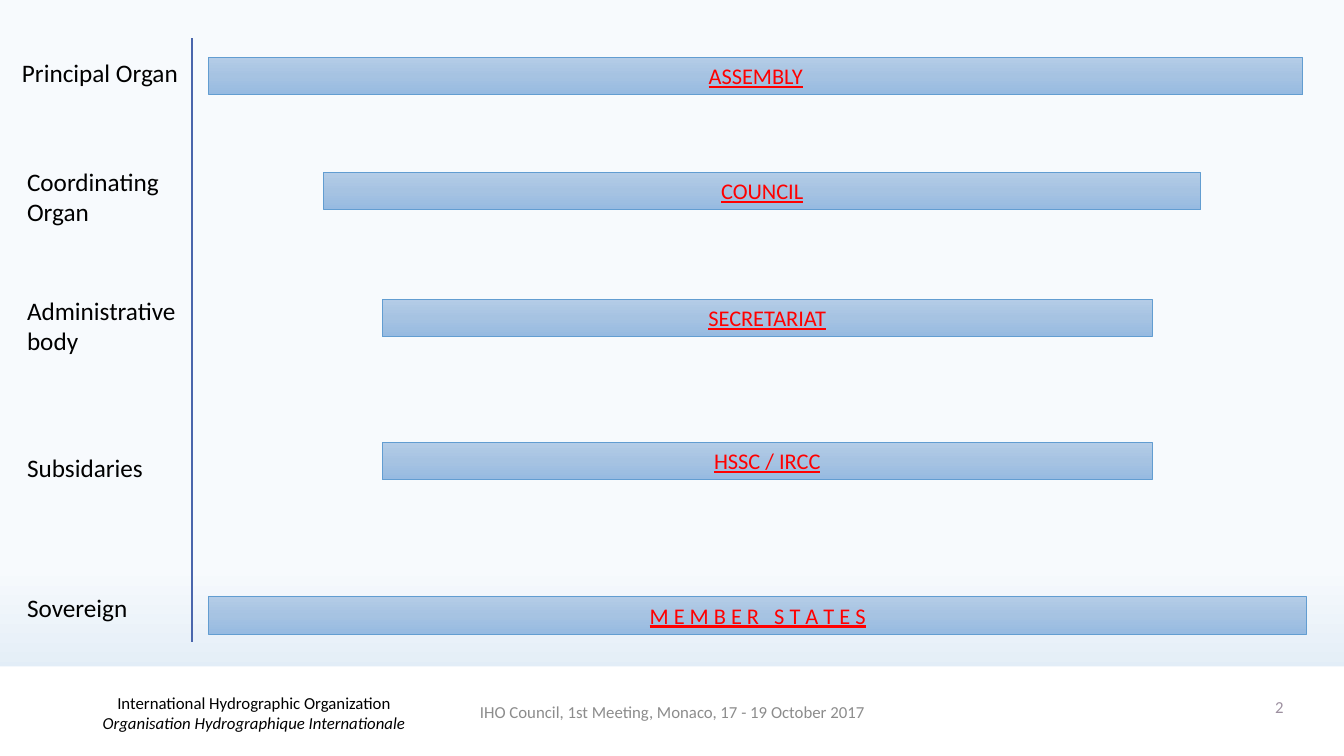
import copy
from dataclasses import dataclass

import pptx
import pptx.dml.color
import pptx.enum.shapes
import pptx.enum.text
import pptx.oxml.ns
import pptx.oxml.xmlchemy
import pptx.util
from pptx.util import Inches

COLORS = {
    "sky": "F7FAFD", "sky_end": "D0E2F1", "white": "FFFFFF", "black": "000000",
    "bar_top": "B4CCE7", "bar_middle": "A6C3E2", "bar_bottom": "96BAE1",
    "bar_edge": "629DD1", "bar_text": "FF0000", "divider": "4A66AC",
    "footer": "8C8C8C", "number": "9D90A0",
}
ALIGN = pptx.enum.text.PP_ALIGN
ANCHOR = pptx.enum.text.MSO_ANCHOR
AUTO_SIZE = pptx.enum.text.MSO_AUTO_SIZE
RECTANGLE = pptx.enum.shapes.MSO_SHAPE.RECTANGLE
BAR_HEIGHT = 0.37


@dataclass
class Organ:
    role: str
    role_left: float
    role_top: float
    role_height: float
    name: str
    bar_left: float
    bar_top: float
    bar_width: float


@dataclass
class FooterItem:
    text: str
    left: float
    top: float
    width: float
    color: str
    align: ALIGN
    anchor: ANCHOR


ORGANS = [
    Organ("Principal Organ", 0.12, 0.52, 0.4, "ASSEMBLY", 2.07, 0.57, 10.85),
    Organ("Coordinating\vOrgan", 0.17, 1.6, 0.71, "COUNCIL", 3.21, 1.71, 8.7),
    Organ("Administrative\vbody", 0.17, 2.88, 0.71, "SECRETARIAT", 3.79, 2.97, 7.64),
    Organ("Subsidaries", 0.17, 4.44, 0.4, "HSSC / IRCC", 3.79, 4.39, 7.64),
    Organ("Sovereign", 0.17, 5.83, 0.4, "M E M B E R   S T A T E S", 2.07, 5.92, 10.89),
]
FOOTER = [
    FooterItem("International Hydrographic Organization\v"
               "Organisation Hydrographique Internationale",
               0.27, 6.87, 4.5, "black", ALIGN.CENTER, ANCHOR.MIDDLE),
    FooterItem("IHO Council, 1st Meeting, Monaco, 17 - 19 October 2017",
               4.42, 6.86, 4.5, "footer", ALIGN.CENTER, ANCHOR.MIDDLE),
    FooterItem("2", 9.83, 6.86, 3, "number", ALIGN.RIGHT, ANCHOR.TOP),
]


def rgb(name: str) -> pptx.dml.color.RGBColor:
    return pptx.dml.color.RGBColor.from_string(COLORS[name])


def fill_gradient(fill, owner, stops: list[tuple[float, str]]) -> None:
    """Fill from top to bottom; owner is the element that holds the fill."""
    fill.gradient()
    fill.gradient_angle = 270
    stop_list = owner.xpath(".//a:gsLst")[0]
    while len(stop_list) < len(stops):
        stop_list.append(copy.deepcopy(stop_list[-1]))
    for stop, (position, color) in zip(fill.gradient_stops, stops):
        stop.position = position
        stop.color.rgb = rgb(color)


def write_text(shape, text: str, size: int, color: str, align=ALIGN.LEFT,
               anchor=ANCHOR.TOP, grow: bool = False, underline: bool = False):
    frame = shape.text_frame
    frame.word_wrap = True
    frame.auto_size = AUTO_SIZE.SHAPE_TO_FIT_TEXT if grow else AUTO_SIZE.NONE
    frame.vertical_anchor = anchor
    paragraph = frame.paragraphs[0]
    paragraph.text = text
    paragraph.alignment = align
    for run in paragraph.runs:
        run.font.name = "Calibri"
        run.font.size = pptx.util.Pt(size)
        run.font.color.rgb = rgb(color)
        if underline:
            run.font.underline = True
    return paragraph


def add_text(slide, left: float, top: float, width: float, height: float,
             text: str, size: int, color: str, **options):
    box = slide.shapes.add_textbox(
        Inches(left), Inches(top), Inches(width), Inches(height))
    return write_text(box, text, size, color, **options)


def add_rectangle(slide, left: float, top: float, width: float, height: float):
    shape = slide.shapes.add_shape(
        RECTANGLE, Inches(left), Inches(top), Inches(width), Inches(height))
    shape.shadow.inherit = False
    return shape


def add_organ(slide, organ: Organ) -> None:
    add_text(slide, organ.role_left, organ.role_top, 2.7, organ.role_height,
             organ.role, 18, "black", grow=True)
    bar = add_rectangle(slide, organ.bar_left, organ.bar_top,
                        organ.bar_width, BAR_HEIGHT)
    fill_gradient(bar.fill, bar.element,
                  [(0, "bar_top"), (0.5, "bar_middle"), (1, "bar_bottom")])
    bar.line.color.rgb = rgb("bar_edge")
    bar.line.width = pptx.util.Pt(0.5)
    write_text(bar, organ.name, 16, "bar_text", align=ALIGN.CENTER,
               grow=True, underline=True)


def add_divider(slide) -> None:
    divider = slide.shapes.add_connector(
        pptx.enum.shapes.MSO_CONNECTOR.STRAIGHT,
        Inches(1.9), Inches(0.38), Inches(1.9), Inches(6.37))
    divider.line.color.rgb = rgb("divider")
    divider.line.width = pptx.util.Pt(1.5)
    properties = divider.element.spPr
    properties.append(properties.makeelement(pptx.oxml.ns.qn("a:effectLst"), {}))


def add_footer(slide) -> None:
    band = add_rectangle(slide, 0, 6.61, 13.33, 0.89)
    band.fill.solid()
    band.fill.fore_color.rgb = rgb("white")
    band.line.fill.background()
    for item in FOOTER:
        paragraph = add_text(slide, item.left, item.top, item.width, 0.4, item.text,
                             12, item.color, align=item.align, anchor=item.anchor)
        # The second line carries the French name
        for run in paragraph.runs[1:]:
            run.font.italic = True


def main() -> None:
    presentation = pptx.Presentation()
    presentation.slide_width = Inches(13.33)
    presentation.slide_height = Inches(7.5)
    slide = presentation.slides.add_slide(presentation.slide_layouts[6])

    # Background and footer
    fill_gradient(slide.background.fill, slide.element,
                  [(0.75, "sky"), (1, "sky_end")])
    add_footer(slide)

    # Organs, one per level, to the right of the divider
    add_divider(slide)
    for organ in ORGANS:
        add_organ(slide, organ)

    presentation.save("out.pptx")


if __name__ == "__main__":
    main()
